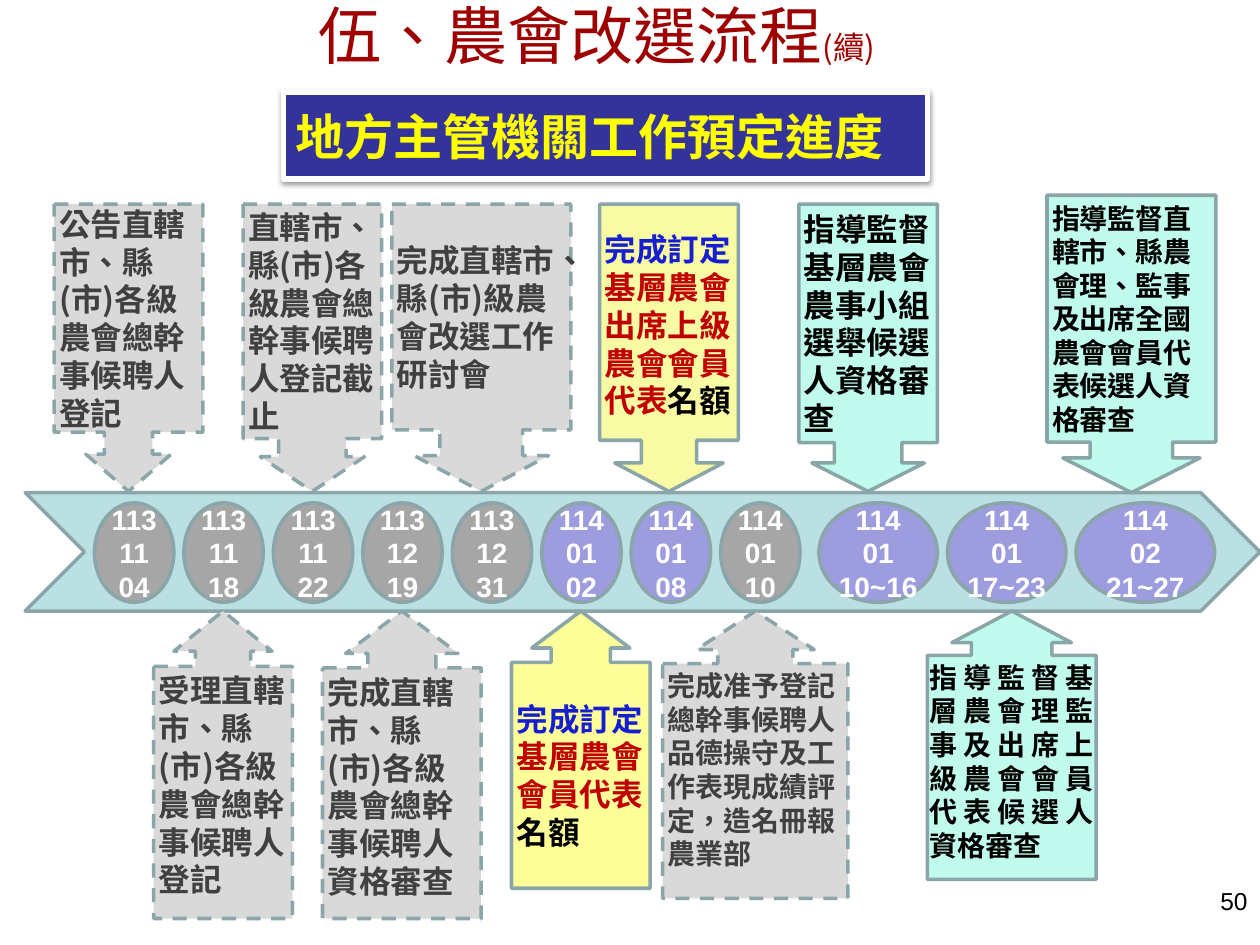
from dataclasses import dataclass

from lxml import etree
from pptx import Presentation
from pptx.dml.color import RGBColor
from pptx.enum.dml import MSO_LINE
from pptx.enum.lang import MSO_LANGUAGE_ID
from pptx.enum.shapes import MSO_SHAPE
from pptx.enum.text import MSO_ANCHOR, PP_ALIGN
from pptx.oxml.ns import qn
from pptx.util import Inches, Pt

UP, DOWN = MSO_SHAPE.UP_ARROW_CALLOUT, MSO_SHAPE.DOWN_ARROW_CALLOUT
CHEVRON, OVAL, RECTANGLE = MSO_SHAPE.CHEVRON, MSO_SHAPE.OVAL, MSO_SHAPE.RECTANGLE
TOP, MIDDLE = MSO_ANCHOR.TOP, MSO_ANCHOR.MIDDLE
LEFT, CENTER, RIGHT, JUSTIFY = PP_ALIGN.LEFT, PP_ALIGN.CENTER, PP_ALIGN.RIGHT, PP_ALIGN.JUSTIFY
DASH = MSO_LINE.DASH
CHINESE = MSO_LANGUAGE_ID.TRADITIONAL_CHINESE


@dataclass(frozen=True)
class Theme:
    """Colours, fonts and type sizes of the slide."""
    latin: str = "Arial"
    chinese: str = "Noto Sans CJK SC"
    outline: str = "8AA6A8"
    band: str = "BBE0E3"
    done: str = "A6A6A6"
    pending: str = "9C9CDF"
    gray: str = "D9D9D9"
    yellow: str = "FFFF99"
    pale_yellow: str = "F8FAA4"
    mint: str = "C1FBED"
    muted: str = "404040"
    black: str = "000000"
    white: str = "FFFFFF"
    blue: str = "151ED1"
    red: str = "C00000"
    heading: str = "9E0000"
    banner: str = "333399"
    banner_text: str = "FFFF00"
    heading_size: int = 36
    banner_size: int = 28
    body_size: int = 18
    small_size: int = 16
    number_size: int = 14


THEME = Theme()

DATES = [
    ("113", "11", "04", THEME.done), ("113", "11", "18", THEME.done),
    ("113", "11", "22", THEME.done), ("113", "12", "19", THEME.done),
    ("113", "12", "31", THEME.done), ("114", "01", "02", THEME.pending),
    ("114", "01", "08", THEME.pending), ("114", "01", "10", THEME.done),
]
PERIODS = [("114", "01", "10~16", 0.94), ("114", "01", "17~23", 0.94), ("114", "02", "21~27", 1.1)]


def muted(text):
    """Return one run in the colour of finished work."""
    return [(text, THEME.muted)]


def quota(subject):
    """Return the three coloured runs of a quota decision."""
    return [("完成訂定", THEME.blue), (subject, THEME.red), ("名額", THEME.black)]


def black(text):
    """Return one run in black."""
    return [(text, THEME.black)]


UPPER = [
    ((0.43, 1.62, 1.18, 2.28), (0.323, 0.287, 0.25, 0.794), THEME.gray,
     muted("公告直轄市、縣(市)各級農會總幹事候聘人登記"), {}),
    ((1.93, 1.62, 1.1, 2.28), (0.488, 0.376, 0.25, 0.816), THEME.gray,
     muted("直轄市、縣(市)各級農會總幹事候聘人登記截止"), {}),
    ((3.11, 1.62, 1.42, 2.28), (0.462, 0.376, 0.2, 0.786), THEME.gray,
     muted("完成直轄市、縣(市)級農會改選工作研討會"), {}),
    ((4.76, 1.62, 1.1, 2.28), (0.399, 0.391, 0.205, 0.822), THEME.pale_yellow,
     quota("基層農會出席上級農會會員代表"), {"insets": (0.04, 0.08, 0.04, 0.04)}),
    ((6.34, 1.62, 1.1, 2.28), (0.488, 0.406, 0.205, 0.83), THEME.mint,
     black("指導監督基層農會農事小組選舉候選人資格審查"), {}),
    ((8.31, 1.55, 1.34, 2.36), (0.488, 0.406, 0.205, 0.83), THEME.mint,
     black("指導監督直轄市、縣農會理、監事及出席全國農會會員代表候選人資格審查"),
     {"size": THEME.small_size}),
]
LOWER = [
    ((1.22, 4.85, 1.1, 2.44), (0.399, 0.354, 0.29, 0.82), THEME.gray,
     muted("受理直轄市、縣(市)各級農會總幹事候聘人登記"), {"anchor": TOP}),
    ((2.56, 4.85, 1.26, 2.44), (0.428, 0.354, 0.267, 0.815), THEME.gray,
     muted("完成直轄市、縣(市)各級農會總幹事候聘人資格審查"), {"anchor": TOP}),
    ((4.06, 4.85, 1.1, 2.2), (0.428, 0.354, 0.267, 0.815), THEME.yellow,
     quota("基層農會會員代表"), {}),
    ((5.26, 4.85, 1.47, 2.28), (0.405, 0.318, 0.208, 0.817), THEME.gray,
     muted("完成准予登記總幹事候聘人品德操守及工作表現成績評定，造名冊報農業部"),
     {"anchor": TOP, "size": THEME.small_size}),
    ((7.36, 4.85, 1.34, 2.13), (0.477, 0.354, 0.187, 0.835), THEME.mint,
     black("指導監督基層農會理監事及出席上級農會會員代表候選人資格審查"),
     {"anchor": TOP, "size": THEME.small_size, "align": JUSTIFY,
      "insets": (0.02, 0.04, 0.02, 0.04)}),
]


def set_frame(shape, anchor, insets, wrap=True):
    """Set the anchor, insets and wrapping of a shape's text."""
    frame = shape.text_frame
    frame.word_wrap = wrap
    frame.vertical_anchor = anchor
    frame.margin_left, frame.margin_top, frame.margin_right, frame.margin_bottom = map(Inches, insets)
    return frame


def style_paragraph(paragraph, font_name, size, color, bold, align):
    """Set the shared look of every run in a paragraph."""
    paragraph.alignment = align
    font = paragraph.font
    font.name, font.size, font.bold = font_name, Pt(size), bold
    font.color.rgb = RGBColor.from_string(color)
    defaults = paragraph._p.get_or_add_pPr().find(qn("a:defRPr"))
    etree.SubElement(defaults, qn("a:ea")).set("typeface", font_name)


def add_run(paragraph, text):
    """Add a run of Traditional Chinese text."""
    run = paragraph.add_run()
    run.text = text
    run.font.language_id = CHINESE
    return run


def add_outlined(slide, kind, box, fill, line=THEME.outline, width=2):
    """Add a filled, outlined preset shape without shadow."""
    shape = slide.shapes.add_shape(kind, *map(Inches, box))
    shape.shadow.inherit = False
    shape.fill.solid()
    shape.fill.fore_color.rgb = RGBColor.from_string(fill)
    shape.line.color.rgb = RGBColor.from_string(line)
    shape.line.width = Pt(width)
    return shape


def add_heading(slide, box):
    """Add the slide heading with its small suffix."""
    shape = slide.shapes.add_textbox(*map(Inches, box))
    paragraph = set_frame(shape, TOP, (0.1, 0.05, 0.1, 0.05)).paragraphs[0]
    style_paragraph(paragraph, THEME.chinese, THEME.heading_size, THEME.heading, False, CENTER)
    add_run(paragraph, "伍、農會改選流程")
    add_run(paragraph, "(續)").font.size = Pt(THEME.body_size)


def add_banner(slide, box):
    """Add the banner with a white border and a soft shadow."""
    shape = add_outlined(slide, RECTANGLE, box, THEME.banner, THEME.white, 3)
    effects = shape._element.spPr.find(qn("a:effectLst"))
    shadow = etree.SubElement(effects, qn("a:outerShdw"), blurRad="40000", dist="20000", dir="5400000")
    color = etree.SubElement(shadow, qn("a:srgbClr"), val=THEME.black)
    etree.SubElement(color, qn("a:alpha"), val="38000")
    paragraph = set_frame(shape, MIDDLE, (0.1, 0.05, 0.1, 0.05)).paragraphs[0]
    style_paragraph(paragraph, THEME.chinese, THEME.banner_size, THEME.banner_text, True, LEFT)
    add_run(paragraph, "地方主管機關工作預定進度")


def add_date(slide, box, lines, fill):
    """Add one date oval with year, month and day."""
    shape = add_outlined(slide, OVAL, box, fill)
    frame = set_frame(shape, MIDDLE, (0.02, 0.01, 0.02, 0.01), wrap=False)
    frame.text = "\n".join(lines)
    for paragraph in frame.paragraphs:
        style_paragraph(paragraph, THEME.latin, THEME.small_size, THEME.white, True, CENTER)


def add_timeline(slide, box):
    """Add the chevron band and its rows of single days and periods."""
    left, top, _, _ = box
    add_outlined(slide, CHEVRON, box, THEME.band)
    oval_top, height, day_width, gap = top + 0.08, 0.79, 0.63, 0.08
    for index, (*lines, fill) in enumerate(DATES):
        oval_left = left + 0.55 + index * (day_width + gap)
        add_date(slide, (oval_left, oval_top, day_width, height), lines, fill)
    oval_left = left + 6.3
    for *lines, width in PERIODS:
        add_date(slide, (oval_left, oval_top, width, height), lines, THEME.pending)
        oval_left += width + gap


def add_callout(slide, kind, box, adjustments, fill, runs, size=THEME.body_size,
                anchor=MIDDLE, align=LEFT, insets=(0.04, 0.04, 0.04, 0.04)):
    """Add one task callout, dashed when its work is finished."""
    shape = add_outlined(slide, kind, box, fill)
    for index, value in enumerate(adjustments):
        shape.adjustments[index] = value
    if fill == THEME.gray:
        shape.line.dash_style = DASH
    paragraph = set_frame(shape, anchor, insets).paragraphs[0]
    style_paragraph(paragraph, THEME.chinese, size, runs[0][1], True, align)
    for text, color in runs:
        run = add_run(paragraph, text)
        if len(runs) > 1:
            run.font.color.rgb = RGBColor.from_string(color)


def add_page_number(slide, box):
    """Add the page number at the lower right."""
    shape = slide.shapes.add_textbox(*map(Inches, box))
    frame = set_frame(shape, TOP, (0.1, 0.05, 0.1, 0.05))
    frame.text = "50"
    style_paragraph(frame.paragraphs[0], THEME.latin, THEME.number_size, THEME.black, False, RIGHT)


def main():
    """Build and save the presentation."""
    presentation = Presentation()
    presentation.slide_width, presentation.slide_height = Inches(10), Inches(7.5)
    slide = presentation.slides.add_slide(presentation.slide_layouts[6])
    add_page_number(slide, (7.67, 6.98, 2.33, 0.52))
    add_banner(slide, (2.25, 0.73, 5.11, 0.69))
    add_timeline(slide, (0.2, 3.91, 9.8, 0.94))
    for kind, callouts in ((DOWN, UPPER), (UP, LOWER)):
        for box, adjustments, fill, runs, options in callouts:
            add_callout(slide, kind, box, adjustments, fill, runs, **options)
    add_heading(slide, (0.96, -0.08, 7.56, 0.71))
    presentation.save("out.pptx")


if __name__ == "__main__":
    main()
